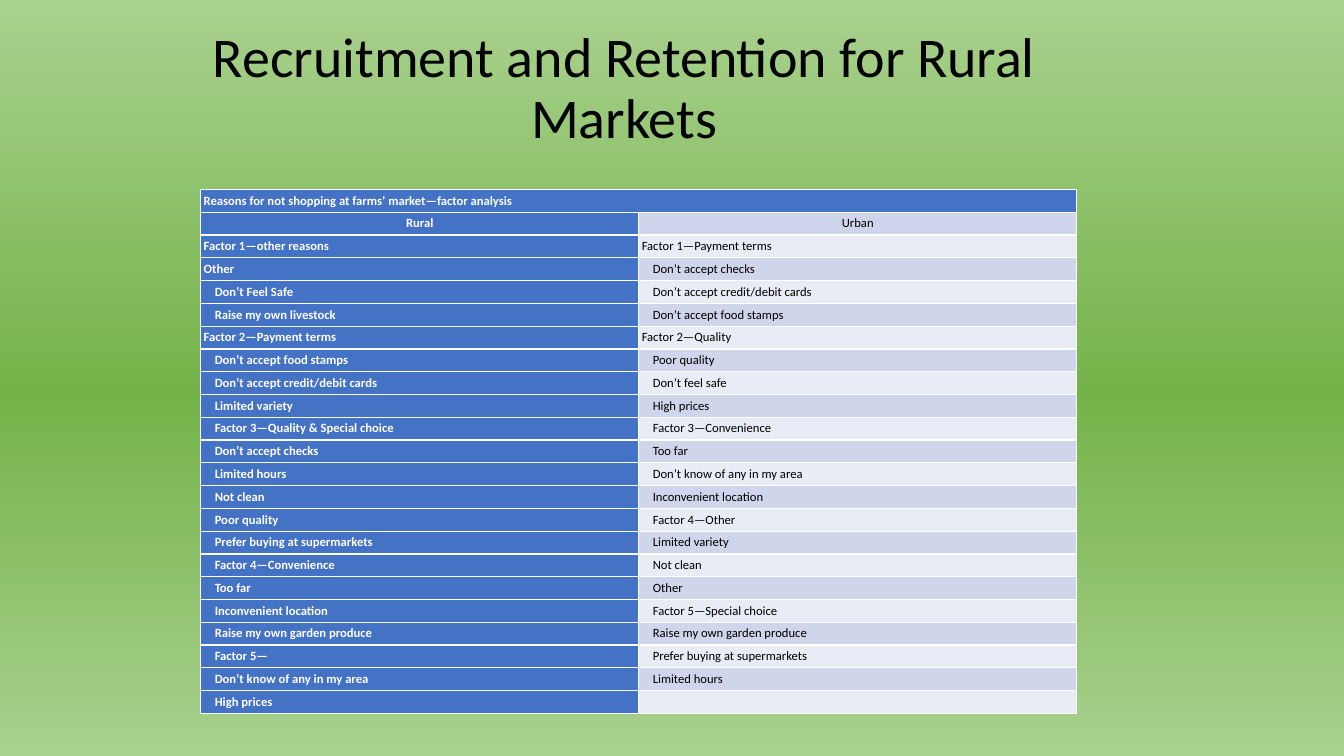
from copy import deepcopy

from pptx import Presentation
from pptx.dml.color import RGBColor
from pptx.enum.text import MSO_ANCHOR, MSO_AUTO_SIZE, PP_ALIGN
from pptx.oxml.ns import qn
from pptx.util import Inches, Pt

COLORS = {
    "light_green": "A9D18E", "green": "74B349", "blue": "4472C4",
    "band_dark": "CFD5EA", "band_light": "E9EBF5",
    "white": "FFFFFF", "black": "000000",
}
FONT = "Calibri"
TABLE_WIDTH, TABLE_HEIGHT = 8.69, 5.2
MARGIN, INDENT = 0.03, 0.11

HEADING = "Reasons for not shopping at farms’ market—factor analysis"
REASONS = [
    ("Rural", "Urban"),
    ("Factor 1—other reasons", "Factor 1—Payment terms"),
    ("Other", "Don’t accept checks"),
    ("Don’t Feel Safe", "Don’t accept credit/debit cards"),
    ("Raise my own livestock", "Don’t accept food stamps"),
    ("Factor 2—Payment terms", "Factor 2—Quality"),
    ("Don’t accept food stamps", "Poor quality"),
    ("Don’t accept credit/debit cards", "Don’t feel safe"),
    ("Limited variety", "High prices"),
    ("Factor 3—Quality & Special choice", "Factor 3—Convenience"),
    ("Don’t accept checks", "Too far"),
    ("Limited hours", "Don’t know of any in my area"),
    ("Not clean", "Inconvenient location"),
    ("Poor quality", "Factor 4—Other"),
    ("Prefer buying at supermarkets", "Limited variety"),
    ("Factor 4—Convenience", "Not clean"),
    ("Too far", "Other"),
    ("Inconvenient location", "Factor 5—Special choice"),
    ("Raise my own garden produce", "Raise my own garden produce"),
    ("Factor 5—", "Prefer buying at supermarkets"),
    ("Don’t know of any in my area", "Limited hours"),
    ("High prices", ""),
]


def color(name):
    return RGBColor.from_string(COLORS[name])


def fill_cell(cell, text, fill, font_color, bold):
    """Write one line of text in a cell and return its paragraph."""
    cell.fill.solid()
    cell.fill.fore_color.rgb = color(fill)
    cell.vertical_anchor = MSO_ANCHOR.MIDDLE
    cell.margin_left = cell.margin_right = Inches(MARGIN)
    cell.margin_top = cell.margin_bottom = Inches(MARGIN)
    cell.text = text
    paragraph = cell.text_frame.paragraphs[0]
    paragraph.space_after = Pt(5.2)
    font = paragraph.font
    font.name, font.size, font.bold = FONT, Pt(9), bold
    font.color.rgb = color(font_color)
    if not text:  # an empty line takes its height from the end mark
        end_mark = paragraph._p.get_or_add_endParaRPr()
        end_mark.set("sz", "900")
    return paragraph


presentation = Presentation()
presentation.slide_width = Inches(13.33)
presentation.slide_height = Inches(7.5)
slide = presentation.slides.add_slide(presentation.slide_layouts[0])

# Background: light, dark and light green from bottom to top
background = slide.background.fill
background.gradient()
background.gradient_angle = 90
stop_list = slide.element.find(".//" + qn("a:gsLst"))
stop_list.append(deepcopy(stop_list[0]))
stops = [(0, "light_green"), (0.48, "green"), (1, "light_green")]
for stop, (position, name) in zip(background.gradient_stops, stops):
    stop.position = position
    stop.color.rgb = color(name)

# Title
title = slide.shapes.title
title.left, title.top = Inches(1.16), Inches(0.12)
title.width, title.height = Inches(10.06), Inches(1.42)
title.text = "Recruitment and Retention for Rural Markets"
title.text_frame.auto_size = MSO_AUTO_SIZE.NONE
title.text_frame.vertical_anchor = MSO_ANCHOR.BOTTOM
paragraph = title.text_frame.paragraphs[0]
paragraph.alignment = PP_ALIGN.CENTER
paragraph.line_spacing = 0.9
paragraph.font.name, paragraph.font.size = FONT, Pt(40)
paragraph.font.color.rgb = color("black")

subtitle = slide.placeholders[1].element
subtitle.getparent().remove(subtitle)

# Table: heading row, then rural and urban reasons side by side
row_count = len(REASONS) + 1
table = slide.shapes.add_table(
    row_count, 2, Inches(1.99), Inches(1.88),
    Inches(TABLE_WIDTH), Inches(TABLE_HEIGHT)).table
table.first_col = True
for row in table.rows:
    row.height = Inches(TABLE_HEIGHT / row_count)

table.cell(0, 0).merge(table.cell(0, 1))
fill_cell(table.cell(0, 0), HEADING, "blue", "white", True)

for row_index, (rural, urban) in enumerate(REASONS, start=1):
    band = "band_dark" if row_index % 2 else "band_light"
    paragraphs = [
        fill_cell(table.cell(row_index, 0), rural, "blue", "white", True),
        fill_cell(table.cell(row_index, 1), urban, band, "black", False),
    ]
    for column, paragraph in enumerate(paragraphs):
        flush = (paragraph.text.startswith(("Factor 1", "Factor 2"))
                 or (column == 0 and paragraph.text == "Other"))
        if row_index == 1:
            paragraph.alignment = PP_ALIGN.CENTER
        elif paragraph.text and not flush:
            properties = paragraph._p.get_or_add_pPr()
            properties.set("marL", str(Inches(INDENT)))
            properties.set("indent", "0")

presentation.save("out.pptx")
